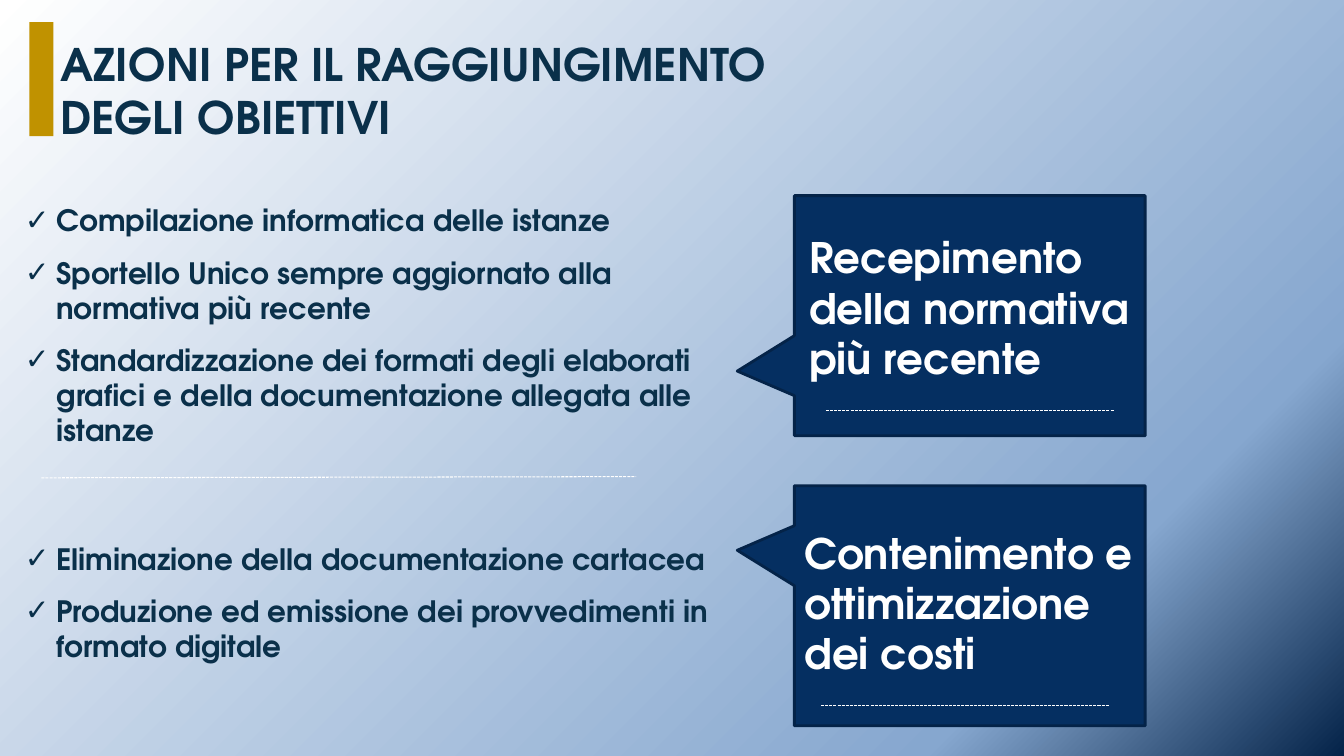
from dataclasses import dataclass

from lxml import etree
from pptx import Presentation
from pptx.dml.color import RGBColor
from pptx.enum.dml import MSO_LINE_DASH_STYLE as Dash
from pptx.enum.shapes import MSO_CONNECTOR as Connector, MSO_SHAPE as Shape
from pptx.enum.text import MSO_ANCHOR as Anchor, PP_ALIGN as Align
from pptx.oxml.ns import qn
from pptx.util import Cm, Pt


@dataclass(frozen=True)
class Theme:
    font: str = "TeX Gyre Adventor"
    ink: str = "0A304A"
    white: str = "FFFFFF"
    gold: str = "C09200"
    navy: str = "052F61"
    navy_edge: str = "042348"
    background: tuple = ((0, "FFFFFF"), (80, "86A7CF"), (100, "042349"))
    title_size: int = 32
    callout_size: int = 30
    list_size: int = 21
    paragraph_gap: int = 6
    bullet_indent: float = 0.79


THEME = Theme()


def color(value):
    return RGBColor.from_string(value)


def paint_background(slide):
    fill = slide.background.fill
    fill.gradient()
    fill.gradient_angle = 315
    stops = slide.element.find(".//" + qn("a:gsLst"))
    for stop in list(stops):
        stops.remove(stop)
    for percent, value in THEME.background:
        stop = etree.SubElement(stops, qn("a:gs"), pos=str(percent * 1000))
        etree.SubElement(stop, qn("a:srgbClr"), val=value)


def add_bullet(paragraph):
    properties = paragraph._p.get_or_add_pPr()
    indent = Cm(THEME.bullet_indent)
    properties.set("marL", str(indent))
    properties.set("indent", str(-indent))
    etree.SubElement(properties, qn("a:buFont"), typeface="Arial")
    etree.SubElement(properties, qn("a:buChar"), char="✓")


def add_text(slide, box, texts, size, ink, anchor=Anchor.TOP, bullets=False):
    shape = slide.shapes.add_textbox(*map(Cm, box))
    frame = shape.text_frame
    frame.word_wrap = True
    frame.vertical_anchor = anchor
    for index, text in enumerate(texts):
        paragraph = frame.paragraphs[0] if index == 0 else frame.add_paragraph()
        paragraph.alignment = Align.LEFT
        paragraph.space_before = Pt(THEME.paragraph_gap if index else 0)
        paragraph.space_after = Pt(THEME.paragraph_gap)
        if bullets:
            add_bullet(paragraph)
        run = paragraph.add_run()
        run.text = text
        run.font.name = THEME.font
        run.font.size = Pt(size)
        run.font.bold = True
        run.font.color.rgb = color(ink)


def add_shape(slide, kind, box, fill):
    shape = slide.shapes.add_shape(kind, *map(Cm, box))
    shape.shadow.inherit = False
    shape.fill.solid()
    shape.fill.fore_color.rgb = color(fill)
    shape.line.fill.background()
    return shape


def add_dashed_line(slide, start, end):
    connector = slide.shapes.add_connector(
        Connector.STRAIGHT, *map(Cm, (*start, *end)))
    connector.line.color.rgb = color(THEME.white)
    connector.line.width = Pt(0.75)
    connector.line.dash_style = Dash.SQUARE_DOT
    etree.SubElement(connector._element.spPr, qn("a:effectLst"))


def add_title(slide, box, text):
    left, top, width, height = box
    add_shape(slide, Shape.RECTANGLE, (left, top, 0.61, height), THEME.gold)
    add_text(slide, (left + 0.53, top + 0.23, width - 0.53, 2.31), [text],
             THEME.title_size, THEME.ink)


def add_checklist(slide, box, items):
    add_text(slide, box, items, THEME.list_size, THEME.ink,
             Anchor.MIDDLE, bullets=True)


def add_callout(slide, box, text, pointer_y, text_offset):
    left, top, width, height = box
    callout = add_shape(slide, Shape.RECTANGULAR_CALLOUT, box, THEME.navy)
    callout.adjustments[0] = -0.663
    callout.adjustments[1] = pointer_y
    callout.line.color.rgb = color(THEME.navy_edge)
    callout.line.width = Pt(2)
    text_left, text_top = left + text_offset[0], top + text_offset[1]
    add_text(slide, (text_left, text_top, width, 3.71), [text],
             THEME.callout_size, THEME.white)
    line_left, line_top = text_left + 0.67, text_top + 4.62
    add_dashed_line(slide, (line_left, line_top), (line_left + 7.26, line_top))


def main():
    presentation = Presentation()
    presentation.slide_width = Cm(33.87)
    presentation.slide_height = Cm(19.05)
    slide = presentation.slides.add_slide(presentation.slide_layouts[6])
    paint_background(slide)

    add_title(slide, (0.74, 0.56, 21.94, 2.87),
              "AZIONI PER IL RAGGIUNGIMENTO DEGLI OBIETTIVI")
    add_checklist(slide, (0.38, 5.72, 18.59, 4.95), [
        "Compilazione informatica delle istanze",
        "Sportello Unico sempre aggiornato alla normativa più recente",
        "Standardizzazione dei formati degli elaborati grafici e della "
        "documentazione allegata alle istanze",
    ])
    add_dashed_line(slide, (1.04, 12.04), (16.03, 12.01))
    add_checklist(slide, (0.38, 12.7, 18.06, 4.95), [
        "Eliminazione della documentazione cartacea",
        "Produzione ed emissione dei provvedimenti in formato digitale",
    ])
    add_callout(slide, (20.02, 4.93, 8.84, 6.05),
                "Recepimento della normativa più recente", 0.231, (0.12, 0.79))
    add_callout(slide, (20.02, 12.24, 8.84, 6.05),
                "Contenimento e ottimizzazione dei costi", -0.231, (0, 0.92))
    presentation.save("out.pptx")


if __name__ == "__main__":
    main()
